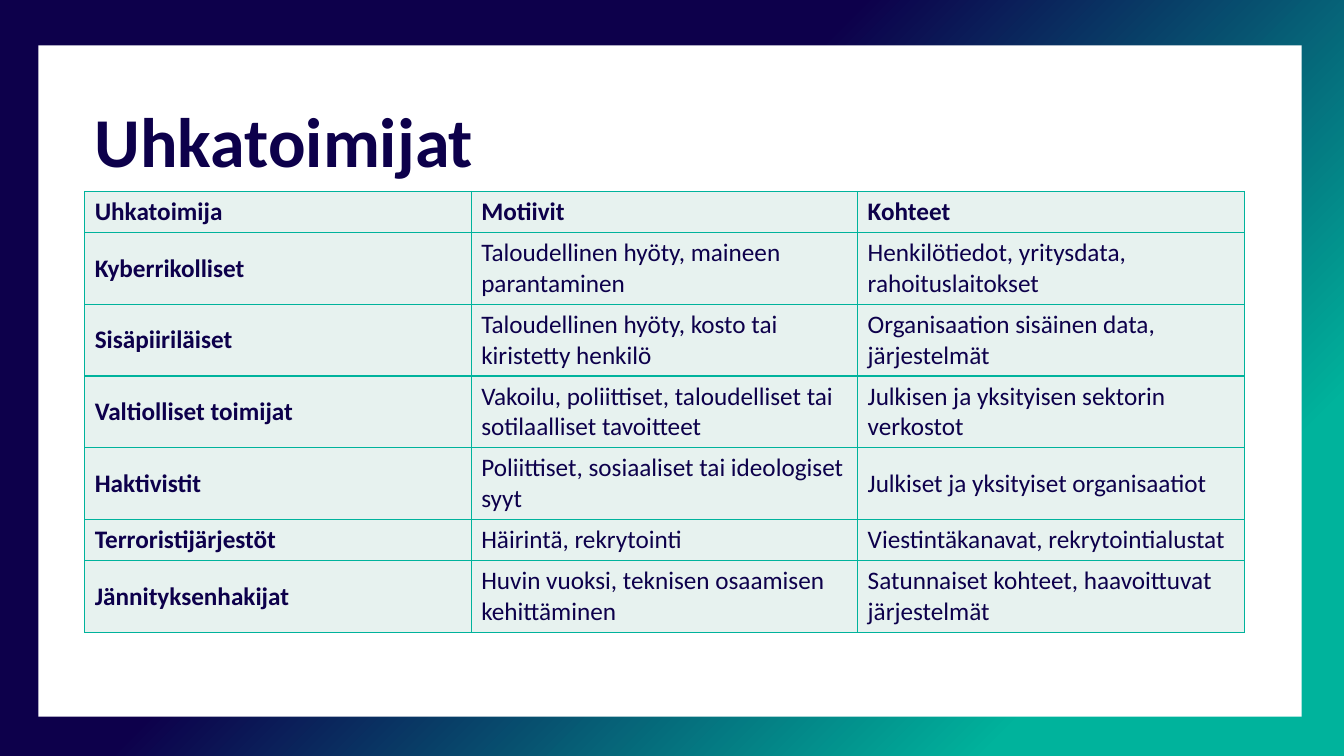
import copy
from dataclasses import dataclass

import pptx
import pptx.dml.color
import pptx.enum.shapes
import pptx.enum.text
import pptx.oxml
import pptx.oxml.ns
import pptx.util

Inches = pptx.util.Inches
Pt = pptx.util.Pt
qn = pptx.oxml.ns.qn


@dataclass(frozen=True)
class Theme:
    navy: str = "0D004B"
    teal: str = "00B39C"
    mint: str = "E7F2EF"
    white: str = "FFFFFF"
    font: str = "Calibri"
    title_size: int = 50
    table_size: int = 18
    border_width: int = 1


THEME = Theme()

THREAT_ACTORS = [
    ("Uhkatoimija", "Motiivit", "Kohteet"),
    ("Kyberrikolliset", "Taloudellinen hyöty, maineen parantaminen",
     "Henkilötiedot, yritysdata, rahoituslaitokset"),
    ("Sisäpiiriläiset", "Taloudellinen hyöty, kosto tai kiristetty henkilö",
     "Organisaation sisäinen data, järjestelmät"),
    ("Valtiolliset toimijat",
     "Vakoilu, poliittiset, taloudelliset tai sotilaalliset tavoitteet",
     "Julkisen ja yksityisen sektorin verkostot"),
    ("Haktivistit", "Poliittiset, sosiaaliset tai ideologiset syyt",
     "Julkiset ja yksityiset organisaatiot"),
    ("Terroristijärjestöt", "Häirintä, rekrytointi",
     "Viestintäkanavat, rekrytointialustat"),
    ("Jännityksenhakijat", "Huvin vuoksi, teknisen osaamisen kehittäminen",
     "Satunnaiset kohteet, haavoittuvat järjestelmät"),
]
SINGLE_LINE_ROWS = (0, 5)


def rgb(code):
    return pptx.dml.color.RGBColor.from_string(code)


def write_text(frame, text, size, bold=False, color=THEME.navy, line_spacing=None):
    frame.word_wrap = True
    paragraph = frame.paragraphs[0]
    paragraph.alignment = pptx.enum.text.PP_ALIGN.LEFT
    if line_spacing:
        paragraph.line_spacing = line_spacing
    run = paragraph.add_run()
    run.text = text
    run.font.name = THEME.font
    run.font.size = Pt(size)
    run.font.bold = bold
    run.font.color.rgb = rgb(color)


def paint_background(slide):
    fill = slide.background.fill
    fill.gradient()
    fill.gradient_angle = 315
    stop_list = next(slide.element.iter(qn("a:gsLst")))
    for stop in list(stop_list)[:2]:
        stop_list.append(copy.deepcopy(stop))
    colors = (THEME.navy, THEME.navy, THEME.teal, THEME.teal)
    for stop, position, color in zip(fill.gradient_stops, (0, 0.41, 0.83, 0.99), colors):
        stop.position = position
        stop.color.rgb = rgb(color)


def place_panel(slide, left, top, width, height):
    panel = slide.shapes.add_shape(
        pptx.enum.shapes.MSO_SHAPE.RECTANGLE, left, top, width, height)
    panel.shadow.inherit = False
    panel.fill.solid()
    panel.fill.fore_color.rgb = rgb(THEME.white)
    panel.line.fill.background()
    slide.shapes.element.insert(2, panel.element)


def place_title(slide, left, top, width, height):
    title = slide.shapes.title
    title.left, title.top, title.width, title.height = left, top, width, height
    frame = title.text_frame
    frame.auto_size = pptx.enum.text.MSO_AUTO_SIZE.NONE
    frame.vertical_anchor = pptx.enum.text.MSO_ANCHOR.MIDDLE
    write_text(frame, "Uhkatoimijat", THEME.title_size, bold=True, line_spacing=0.9)


def border_cell(cell):
    properties = cell._tc.get_or_add_tcPr()
    for index, side in enumerate(("lnL", "lnR", "lnT", "lnB")):
        properties.insert(index, pptx.oxml.parse_xml(
            f'<a:{side} {pptx.oxml.ns.nsdecls("a")} w="{Pt(THEME.border_width)}">'
            f'<a:solidFill><a:srgbClr val="{THEME.teal}"/></a:solidFill></a:{side}>'))


def place_actor_table(slide, left, top, width, height):
    row_count, column_count = len(THREAT_ACTORS), len(THREAT_ACTORS[0])
    table = slide.shapes.add_table(
        row_count, column_count, left, top, width, height).table
    table.first_row = False
    table.horz_banding = False
    for column in table.columns:
        column.width = int(width / column_count)
    for row_index, entries in enumerate(THREAT_ACTORS):
        row_height = 0.41 if row_index in SINGLE_LINE_ROWS else 0.71
        table.rows[row_index].height = Inches(row_height)
        for column_index, entry in enumerate(entries):
            cell = table.cell(row_index, column_index)
            cell.fill.solid()
            cell.fill.fore_color.rgb = rgb(THEME.mint)
            cell.vertical_anchor = pptx.enum.text.MSO_ANCHOR.MIDDLE
            write_text(cell.text_frame, entry, THEME.table_size,
                       bold=row_index == 0 or column_index == 0)
            border_cell(cell)


def main():
    deck = pptx.Presentation()
    deck.slide_width, deck.slide_height = Inches(13.33), Inches(7.5)
    slide = deck.slides.add_slide(deck.slide_layouts.get_by_name("Title Only"))
    left, width = Inches(0.84), Inches(11.5)
    paint_background(slide)
    place_panel(slide, Inches(0.38), Inches(0.45), Inches(12.53), Inches(6.66))
    place_title(slide, left, Inches(0.99), width, Inches(0.9))
    place_actor_table(slide, left, Inches(1.9), width, Inches(4.37))
    deck.save("out.pptx")


if __name__ == "__main__":
    main()
